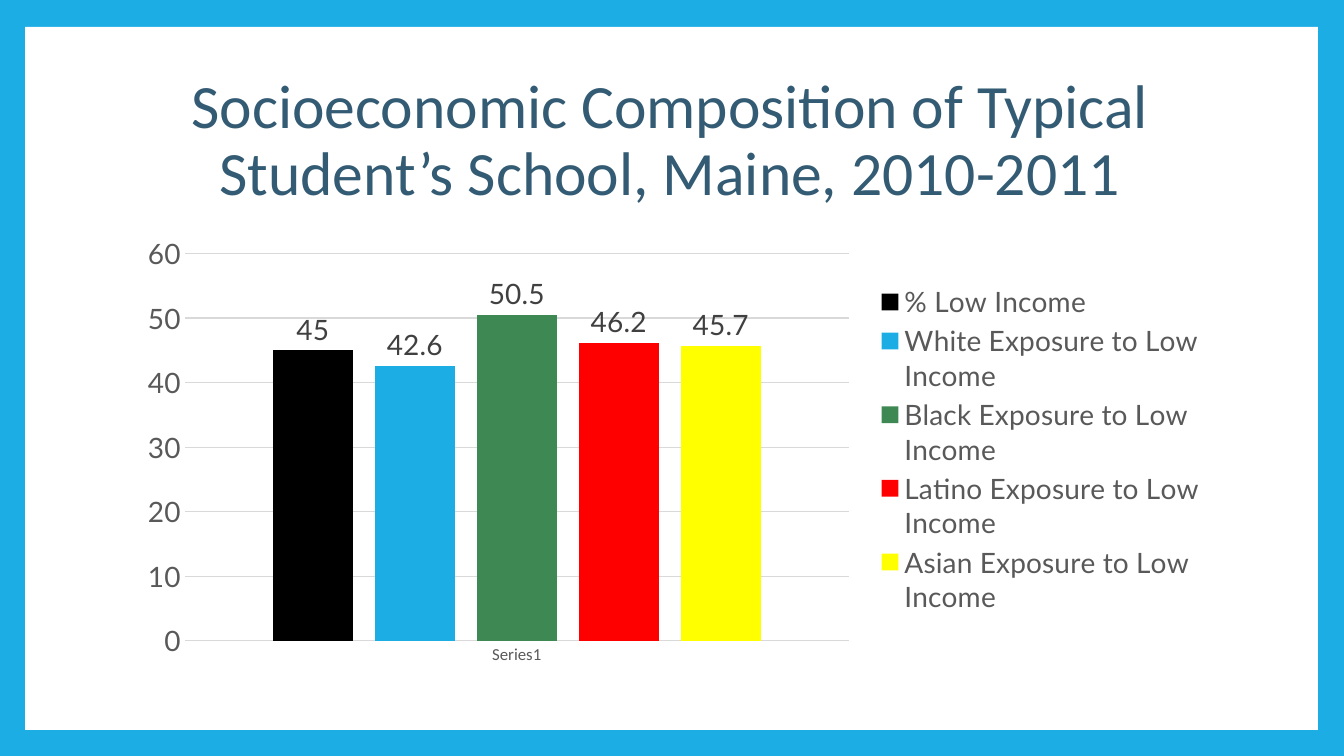
from lxml import etree
from pptx import Presentation
from pptx import util as u
from pptx.chart.data import CategoryChartData
from pptx.dml.color import RGBColor
from pptx.enum import chart as ch, shapes, text
from pptx.oxml.ns import qn

SKY = RGBColor(0x1C, 0xAD, 0xE4)
WHITE = RGBColor(0xFF, 0xFF, 0xFF)
NAVY = RGBColor(0x33, 0x5B, 0x74)
BLACK = RGBColor(0, 0, 0)
GREEN = RGBColor(0x3E, 0x88, 0x53)
RED = RGBColor(0xFF, 0, 0)
YELLOW = RGBColor(0xFF, 0xFF, 0)
GRID = RGBColor(0xD9, 0xD9, 0xD9)
AXIS_GREY = RGBColor(0x59, 0x59, 0x59)
LABEL_GREY = RGBColor(0x40, 0x40, 0x40)

TITLE = "Socioeconomic Composition of Typical Student’s School, Maine, 2010-2011"
EXPOSURES = [
    ("% Low Income", 45, BLACK),
    ("White Exposure to Low Income", 42.6, SKY),
    ("Black Exposure to Low Income", 50.5, GREEN),
    ("Latino Exposure to Low Income", 46.2, RED),
    ("Asian Exposure to Low Income", 45.7, YELLOW),
]


class CompositionSlide:
    """Holds the slide and its style; lengths are grid units of 1/160 width and 1/90 height."""

    COLUMNS, ROWS = 160, 90

    def __init__(self):
        self.deck = Presentation()
        self.deck.slide_width = u.Inches(13.33)
        self.deck.slide_height = u.Inches(7.5)
        self.slide = self.deck.slides.add_slide(self.deck.slide_layouts[6])
        backdrop = self.slide.background.fill
        backdrop.solid()
        backdrop.fore_color.rgb = SKY

    def box(self, left, top, width, height):
        column = self.deck.slide_width / self.COLUMNS
        row = self.deck.slide_height / self.ROWS
        return [int(n) for n in (left * column, top * row, width * column, height * row)]

    def apply(self, target, formats):
        for attribute, value in formats.items():
            setattr(target, attribute, value)

    def style_font(self, font, face, size, color):
        self.apply(font, {"name": face, "size": u.Pt(size)})
        font.color.rgb = color

    def panel(self, *area):
        page = self.slide.shapes.add_shape(shapes.MSO_SHAPE.RECTANGLE, *self.box(*area))
        page.shadow.inherit = False
        page.fill.solid()
        page.fill.fore_color.rgb = WHITE
        page.line.fill.background()

    def title(self, wording, *area):
        frame = self.slide.shapes.add_textbox(*self.box(*area)).text_frame
        self.apply(frame, {"word_wrap": True, "vertical_anchor": text.MSO_ANCHOR.MIDDLE})
        heading = frame.paragraphs[0]
        self.apply(heading, {"text": wording, "alignment": text.PP_ALIGN.CENTER,
                             "line_spacing": 0.9})
        self.style_font(heading.runs[0].font, "Calibri", 44, NAVY)

    def place(self, parent, index, shares, inner=False):
        for old in parent.findall(qn("c:layout")):
            parent.remove(old)
        layout = etree.Element(qn("c:layout"))
        manual = etree.SubElement(layout, qn("c:manualLayout"))
        settings = [("layoutTarget", "inner")] if inner else []
        settings += [("xMode", "edge"), ("yMode", "edge")]
        settings += zip("xywh", shares)
        for tag, value in settings:
            etree.SubElement(manual, qn("c:" + tag)).set("val", str(value))
        parent.insert(index, layout)

    def column_chart(self, exposures, *area):
        data = CategoryChartData()
        data.categories = ["Series1"]
        for label, share, _ in exposures:
            data.add_series(label, [share])
        chart = self.slide.shapes.add_chart(
            ch.XL_CHART_TYPE.COLUMN_CLUSTERED, *self.box(*area), data).chart
        self.apply(chart, {"has_title": False, "has_legend": True})
        self.style_font(chart.font, "Calibri", 10, BLACK)
        plot = chart.plots[0]
        self.apply(plot, {"gap_width": 219, "overlap": -27, "vary_by_categories": False})
        for series, (_, _, color) in zip(plot.series, exposures):
            series.format.fill.solid()
            series.format.fill.fore_color.rgb = color
            labels = series.data_labels
            self.apply(labels, {"show_value": True,
                                "position": ch.XL_LABEL_POSITION.OUTSIDE_END})
            self.style_font(labels.font, "Lato", 20, LABEL_GREY)
        self.axes(chart)
        self.apply(chart.legend, {"position": ch.XL_LEGEND_POSITION.RIGHT,
                                  "include_in_layout": False})
        self.style_font(chart.legend.font, "Lato", 20, AXIS_GREY)
        plot_area = chart._chartSpace.chart.plotArea
        self.place(plot_area, 0, (0.054, 0.06, 0.61, 0.87), inner=True)
        self.place(chart.legend._element, 1, (0.685, 0.12, 0.31, 0.76))

    def axes(self, chart):
        category, value = chart.category_axis, chart.value_axis
        for axis, face, size in ((category, "Calibri", 12), (value, "Lato", 20)):
            self.apply(axis, {"major_tick_mark": ch.XL_TICK_MARK.NONE,
                              "minor_tick_mark": ch.XL_TICK_MARK.NONE})
            self.style_font(axis.tick_labels.font, face, size, AXIS_GREY)
        self.apply(value, {"minimum_scale": 0, "maximum_scale": 60, "major_unit": 10,
                           "has_major_gridlines": True})
        value.format.line.fill.background()
        for line in (category.format.line, value.major_gridlines.format.line):
            line.color.rgb = GRID
            line.width = u.Pt(0.75)


def main():
    page = CompositionSlide()
    page.panel(3, 3.2, 153.9, 83.7)
    page.title(TITLE, 15, 8, 129.6, 17.8)
    page.column_chart(EXPOSURES, 15, 27, 129.6, 53)
    page.deck.save("out.pptx")


if __name__ == "__main__":
    main()
